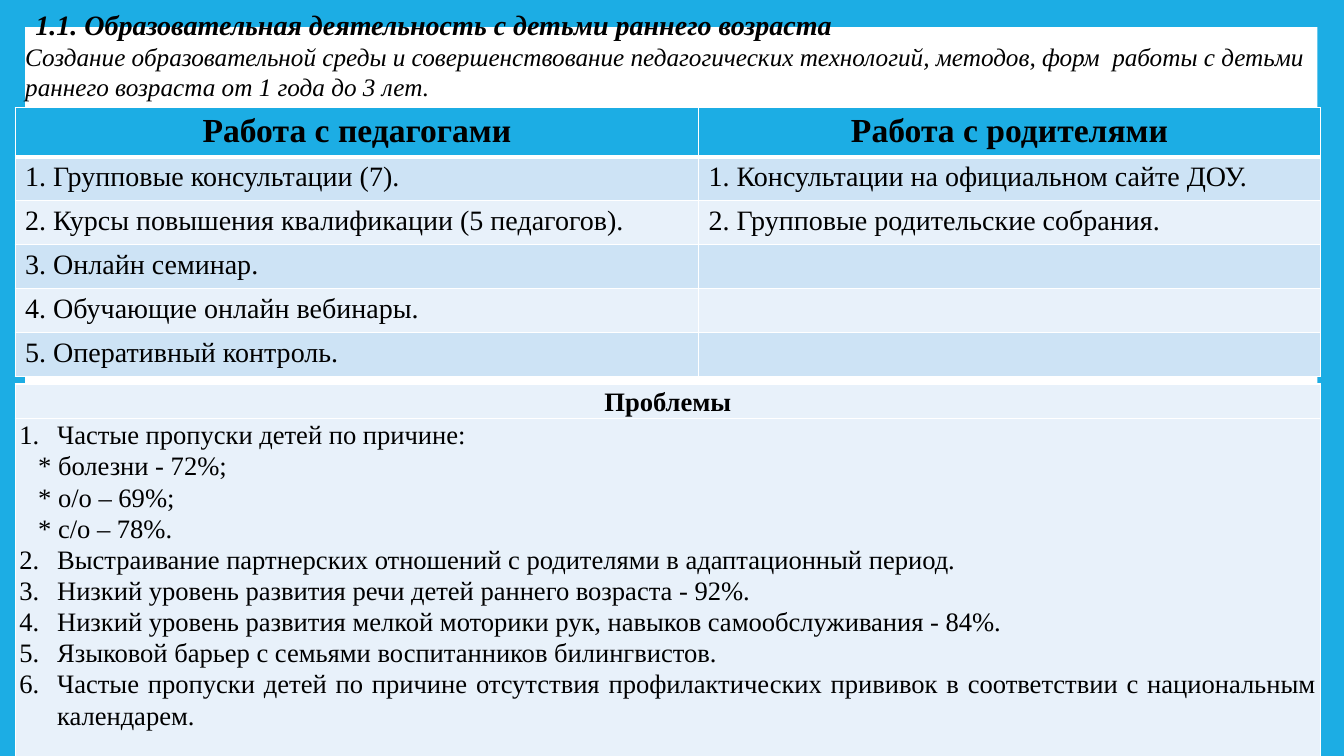
import pptx
import pptx.dml.color
import pptx.enum.shapes
import pptx.enum.text
import pptx.oxml
import pptx.util
from pptx.oxml.ns import qn

Pt = pptx.util.Pt
ALIGN = pptx.enum.text.PP_ALIGN
ANCHOR = pptx.enum.text.MSO_ANCHOR
FONT = "Times New Roman"
BLUE, PALE, PALER, WHITE, BLACK = "1CADE4", "CDE3F5", "E8F1FA", "FFFFFF", "000000"
LEFT, WIDTH = 10.8, 932.4

TEACHERS = ["Работа с педагогами", "1. Групповые консультации (7).",
            "2. Курсы повышения квалификации (5 педагогов).", "3. Онлайн семинар.",
            "4. Обучающие онлайн вебинары.", "5. Оперативный контроль."]
PARENTS = ["Работа с родителями", "1. Консультации на официальном сайте ДОУ.",
           "2. Групповые родительские собрания.", "", "", ""]
# Each entry: text and the number its list starts from (None for a sub-item)
PROBLEMS = [
    ("Частые пропуски детей по причине:", 1),
    ("* болезни - 72%;", None),
    ("* о/о – 69%;", None),
    ("* с/о – 78%.", None),
    ("Выстраивание партнерских отношений с родителями в адаптационный период.", 2),
    ("Низкий уровень развития речи детей раннего возраста - 92%.", 2),
    ("Низкий уровень развития мелкой моторики рук, навыков самообслуживания - 84%.", 2),
    ("Языковой барьер с семьями воспитанников билингвистов.", 2),
    ("Частые пропуски детей по причине отсутствия профилактических прививок "
     "в соответствии с национальным календарем.", 2),
]


def paint(fill, color):
    fill.solid()
    fill.fore_color.rgb = pptx.dml.color.RGBColor.from_string(color)


def add_run(p, text, size, bold=False, italic=False):
    r = p.add_run()
    r.text = text
    r.font.name, r.font.size = FONT, Pt(size)
    r.font.bold, r.font.italic = bold, italic
    paint(r.font.fill, BLACK)


def next_paragraph(tf, first):
    return tf.paragraphs[0] if first else tf.add_paragraph()


def indent(p, left, hanging=0):
    pPr = p._p.get_or_add_pPr()
    pPr.set("marL", str(Pt(left)))
    pPr.set("indent", str(Pt(hanging)))
    return pPr


def number(p, start):
    pPr = indent(p, 27, -27)
    bullet = pptx.oxml.parse_xml(
        '<a:buAutoNum xmlns:a="http://schemas.openxmlformats.org/drawingml/2006/main" '
        f'type="arabicPeriod" startAt="{start}"/>')
    pPr.append(bullet)


def style_cell(cell, color, top=1, bottom=1):
    """Give the cell white borders, then its fill."""
    tcPr = cell._tc.get_or_add_tcPr()
    for side, width in (("L", 1), ("R", 1), ("T", top), ("B", bottom)):
        ln = tcPr.makeelement(qn(f"a:ln{side}"), {"w": str(Pt(width))})
        fill = ln.makeelement(qn("a:solidFill"), {})
        fill.append(fill.makeelement(qn("a:srgbClr"), {"val": WHITE}))
        ln.append(fill)
        tcPr.append(ln)
    paint(cell.fill, color)


def add_table(s, top, widths, heights):
    frame = s.shapes.add_table(len(heights), len(widths), Pt(LEFT), Pt(top),
                               Pt(sum(widths)), Pt(sum(heights)))
    table = frame.table
    for column, width in zip(table.columns, widths):
        column.width = Pt(width)
    for row, height in zip(table.rows, heights):
        row.height = Pt(height)
    return table


def add_panel(s):
    sp = s.shapes.add_shape(pptx.enum.shapes.MSO_SHAPE.RECTANGLE,
                            Pt(18), Pt(19.4), Pt(923), Pt(502))
    sp.shadow.inherit = False
    paint(sp.fill, WHITE)
    sp.line.fill.background()
    s.shapes.title.element.addprevious(sp.element)


def fill_title(title):
    title.left, title.top, title.width, title.height = Pt(LEFT), Pt(0), Pt(WIDTH), Pt(77)
    tf = title.text_frame
    tf.word_wrap = True
    tf.auto_size = pptx.enum.text.MSO_AUTO_SIZE.NONE
    tf.vertical_anchor = ANCHOR.TOP
    tf.margin_left = tf.margin_right = Pt(7.2)
    tf.margin_top = tf.margin_bottom = Pt(3.6)
    lines = [
        ("1.1. Образовательная деятельность с детьми раннего возраста", 20, True, 7.2, 1.07),
        ("Создание образовательной среды и совершенствование педагогических технологий, "
         "методов, форм  работы с детьми раннего возраста от 1 года до 3 лет.",
         18, False, 0, 1),
    ]
    for i, (text, size, bold, first_line, spacing) in enumerate(lines):
        p = next_paragraph(tf, i == 0)
        p.alignment, p.line_spacing = ALIGN.LEFT, spacing
        p.space_before = p.space_after = Pt(0)
        indent(p, 0, first_line)
        add_run(p, text, size, bold, True)


def add_work_table(s):
    table = add_table(s, 77, [488.2, 444.2], [35] + [31.4] * 5)
    for i, texts in enumerate(zip(TEACHERS, PARENTS)):
        header = i == 0
        color = BLUE if header else PALE if i % 2 else PALER
        for j, text in enumerate(texts):
            cell = table.cell(i, j)
            style_cell(cell, color, 3 if i == 1 else 1, 3 if header else 1)
            if text:
                p = cell.text_frame.paragraphs[0]
                p.alignment = ALIGN.CENTER if header else ALIGN.LEFT
                add_run(p, text, 24 if header else 20, header)


def add_problem_table(s):
    table = add_table(s, 274.3, [WIDTH], [24.5, 242.5])
    header, body = table.cell(0, 0), table.cell(1, 0)
    for cell in (header, body):
        style_cell(cell, PALER)
        cell.margin_left = cell.margin_right = Pt(3)
        cell.margin_top, cell.margin_bottom = Pt(0.7), Pt(0)
    header.vertical_anchor = ANCHOR.MIDDLE
    p = header.text_frame.paragraphs[0]
    p.alignment, p.line_spacing = ALIGN.CENTER, 1.06
    add_run(p, "Проблемы", 19, True)
    for i, (text, start) in enumerate(PROBLEMS):
        p = next_paragraph(body.text_frame, i == 0)
        p.alignment, p.line_spacing = ALIGN.JUSTIFY, 1.06
        if start:
            number(p, start)
        else:
            indent(p, 13.5)
        add_run(p, text, 19)


def main():
    prs = pptx.Presentation()
    prs.slide_width, prs.slide_height = Pt(960), Pt(540)
    s = prs.slides.add_slide(prs.slide_layouts[5])
    paint(s.background.fill, BLUE)
    add_panel(s)
    fill_title(s.shapes.title)
    add_work_table(s)
    add_problem_table(s)
    prs.save("out.pptx")


if __name__ == "__main__":
    main()
